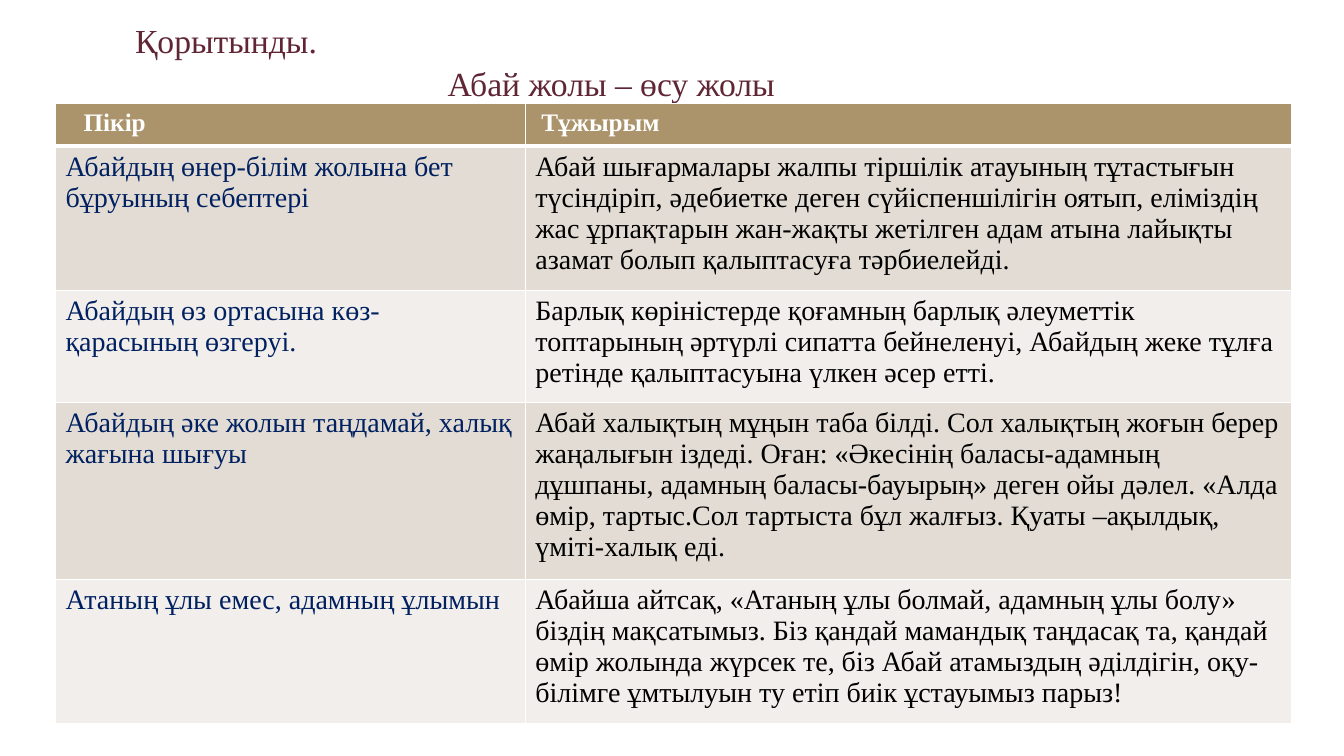
from pptx import Presentation
from pptx import util as u
from pptx.dml.color import RGBColor
from pptx.enum import text
from pptx.oxml import parse_xml
from pptx.oxml.ns import nsdecls

FONT = "Times New Roman"
WHITE = "FFFFFF"


def style(paragraph, size, color, bold=False):
    paragraph.alignment = text.PP_ALIGN.LEFT
    for run in paragraph.runs:
        run.font.name = FONT
        run.font.size = u.Pt(size)
        run.font.bold = bold
        run.font.color.rgb = RGBColor.from_string(color)


def add_borders(cell, bottom_width):
    properties = cell._tc.get_or_add_tcPr()
    widths = {"lnL": 1, "lnR": 1, "lnT": 1, "lnB": bottom_width}
    for position, (side, width) in enumerate(widths.items()):
        properties.insert(position, parse_xml(
            f'<a:{side} {nsdecls("a")} w="{u.Pt(width)}"><a:solidFill>'
            f'<a:srgbClr val="{WHITE}"/></a:solidFill></a:{side}>'))


presentation = Presentation()
presentation.slide_width = u.Inches(13.33)
presentation.slide_height = u.Inches(7.5)
slide = presentation.slides.add_slide(presentation.slide_layouts[5])

# Heading: two lines, the second set further in
heading = slide.shapes.title
heading.left, heading.top = u.Inches(1.18), u.Inches(0.12)
heading.width, heading.height = u.Inches(11.01), u.Inches(0.91)
heading_frame = heading.text_frame
heading_frame.text = "Қорытынды.\nАбай жолы – өсу жолы"
heading_frame.word_wrap = True
heading_frame.auto_size = text.MSO_AUTO_SIZE.NONE
heading_frame.vertical_anchor = text.MSO_ANCHOR.TOP
for line, indent in zip(heading_frame.paragraphs, (0.06, 3.16)):
    line._p.get_or_add_pPr().set("marL", str(u.Inches(indent)))
    line.space_before = u.Pt(0)
    line.line_spacing = 1.07
    style(line, 24, "602636")

# Opinions and conclusions
rows = [
    ("Пікір", "Тұжырым"),
    ("Абайдың өнер-білім жолына бет бұруының себептері",
     "Абай шығармалары жалпы тіршілік атауының тұтастығын түсіндіріп, "
     "әдебиетке деген сүйіспеншілігін оятып, еліміздің жас ұрпақтарын "
     "жан-жақты жетілген адам атына лайықты азамат болып қалыптасуға "
     "тәрбиелейді."),
    ("Абайдың өз ортасына көз- қарасының өзгеруі.",
     "Барлық көріністерде қоғамның барлық әлеуметтік топтарының әртүрлі "
     "сипатта бейнеленуі, Абайдың жеке тұлға ретінде қалыптасуына үлкен "
     "әсер етті."),
    ("Абайдың әке жолын таңдамай, халық жағына шығуы",
     "Абай халықтың мұңын таба білді. Сол халықтың жоғын берер жаңалығын "
     "іздеді. Оған: «Әкесінің баласы-адамның дұшпаны, адамның "
     "баласы-бауырың» деген ойы дәлел. «Алда өмір, тартыс.Сол тартыста бұл "
     "жалғыз. Қуаты –ақылдық, үміті-халық еді."),
    ("Атаның ұлы емес, адамның ұлымын",
     "Абайша айтсақ, «Атаның ұлы болмай, адамның ұлы болу» біздің "
     "мақсатымыз. Біз қандай мамандық таңдасақ та, қандай өмір жолында "
     "жүрсек те, біз Абай атамыздың әділдігін, оқу-білімге ұмтылуын ту етіп "
     "биік ұстауымыз парыз!"),
]
row_heights = (0.42, 1.43, 1.11, 1.76, 1.43)
column_widths = (4.66, 7.6)
header_margins = (0.28, 0.16)
opinion_colors = ("002060", "000000")

conclusions = slide.shapes.add_table(
    len(rows), len(column_widths), u.Inches(0.55), u.Inches(1.03),
    u.Inches(sum(column_widths)), u.Inches(sum(row_heights))).table
for column, width in zip(conclusions.columns, column_widths):
    column.width = u.Inches(width)

for r, (row, height) in enumerate(zip(rows, row_heights)):
    conclusions.rows[r].height = u.Inches(height)
    for c, wording in enumerate(row):
        cell = conclusions.cell(r, c)
        cell.text = wording
        cell.fill.solid()
        if r == 0:
            fill = "AB946B"
            cell.margin_left = u.Inches(header_margins[c])
            style(cell.text_frame.paragraphs[0], 18, WHITE, bold=True)
        else:
            fill = "E2DCD4" if r % 2 else "F1EEEB"
            style(cell.text_frame.paragraphs[0], 20, opinion_colors[c])
        cell.fill.fore_color.rgb = RGBColor.from_string(fill)
        add_borders(cell, 3 if r == 0 else 1)

presentation.save("out.pptx")
